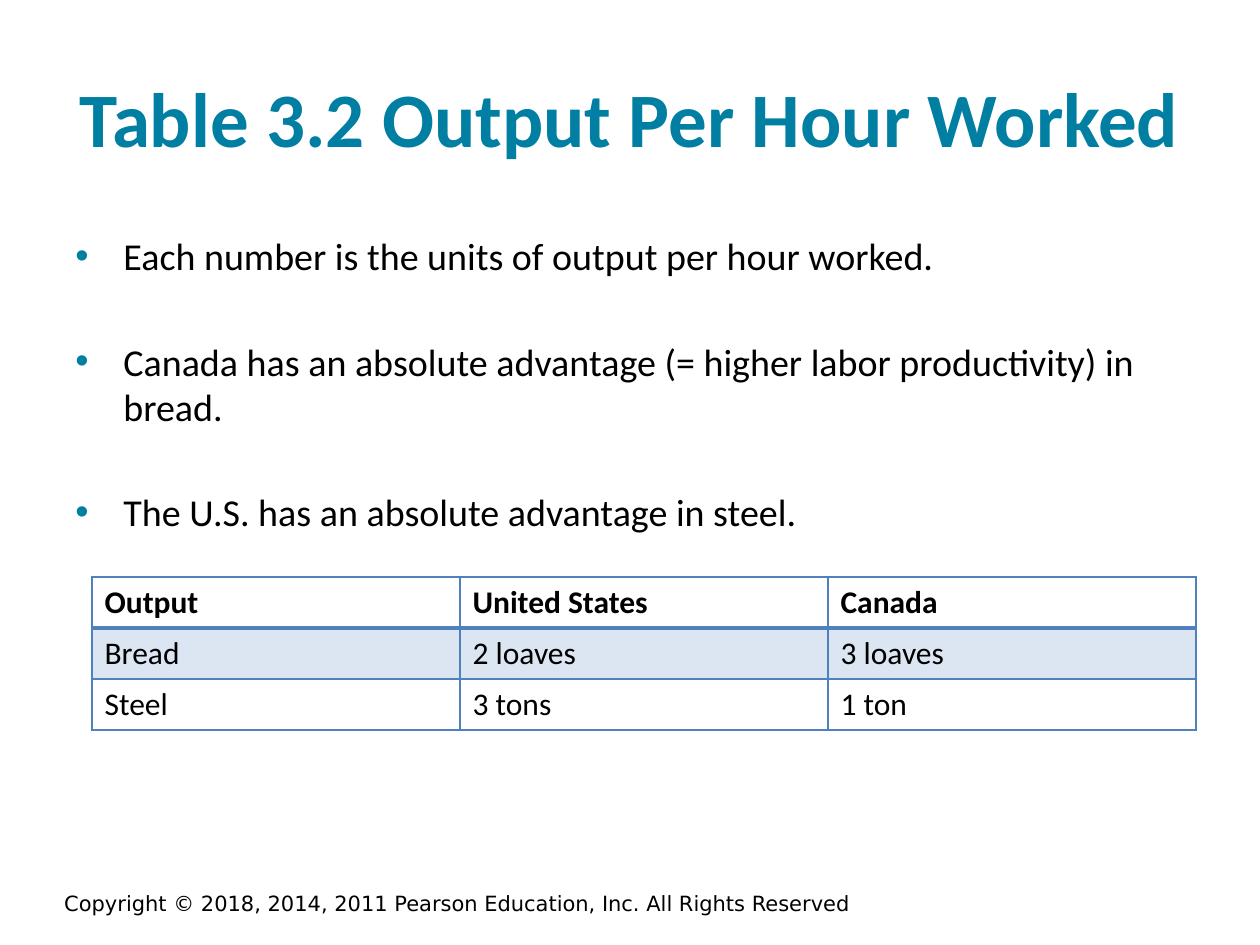
"""Build the slide on output per hour worked, with bullets and a table."""
from lxml import etree
from pptx import Presentation, util as u
from pptx.dml.color import RGBColor
from pptx.enum import text
from pptx.oxml import ns

TEAL = RGBColor(0x00, 0x7F, 0xA3)
BLACK = RGBColor(0, 0, 0)
BLUE = RGBColor(0x4F, 0x81, 0xBD)
PALE_BLUE = RGBColor(0xDC, 0xE6, 0xF2)


def px(length):
    return u.Emu(round(length * 914400 / 126))


def write(paragraph, wording, color=BLACK, **font_format):
    paragraph.text = wording
    for name, value in font_format.items():
        setattr(paragraph.font, name, value)
    paragraph.font.color.rgb = color


prs = Presentation()
prs.slide_width, prs.slide_height = px(1260), px(945)
slide = prs.slides.add_slide(prs.slide_layouts[6])

notice, title, points = [
    slide.shapes.add_textbox(*map(px, box)).text_frame
    for box in ((-20, 881, 955, 45), (63, 38, 1134, 158), (63, 224, 1134, 282))
]
for frame in (notice, title, points):
    frame.word_wrap = True
for frame in (notice, title):
    frame.vertical_anchor = text.MSO_ANCHOR.MIDDLE
    frame.paragraphs[0].alignment = text.PP_ALIGN.CENTER

write(notice.paragraphs[0],
      "Copyright © 2018, 2014, 2011 Pearson Education, Inc. All Rights Reserved",
      name="DejaVu Sans", size=u.Pt(12))
write(title.paragraphs[0], "Table 3.2 Output Per Hour Worked", TEAL,
      name="Calibri", size=u.Pt(44), bold=True)

points.margin_top = px(9)
statements = (
    "Each number is the units of output per hour worked.",
    "Canada has an absolute advantage (= higher labor productivity) in bread.",
    "The U.S. has an absolute advantage in steel.",
)
for index, statement in enumerate(statements):
    point = points.add_paragraph() if index else points.paragraphs[0]
    properties = point._p.get_or_add_pPr()
    properties.set("marL", str(px(48)))
    properties.set("indent", str(px(-48)))
    if index:
        point.space_before = u.Pt(34)
    bullet_color = etree.SubElement(properties, ns.qn("a:buClr"))
    etree.SubElement(bullet_color, ns.qn("a:srgbClr"), val=str(TEAL))
    etree.SubElement(properties, ns.qn("a:buFont"), typeface="Arial")
    etree.SubElement(properties, ns.qn("a:buChar"), char="•")
    write(point, statement, name="Calibri", size=u.Pt(21.7))

outputs = (
    ("Output", "United States", "Canada"),
    ("Bread", "2 loaves", "3 loaves"),
    ("Steel", "3 tons", "1 ton"),
)
table = slide.shapes.add_table(3, 3, *map(px, (92, 577, 1104, 153))).table
table.first_row = table.horz_banding = False
for row, entries in enumerate(outputs):
    for column, entry in enumerate(entries):
        cell = table.cell(row, column)
        write(cell.text_frame.paragraphs[0], entry,
              name="Calibri", size=u.Pt(18), bold=row == 0)
        heavy_side = {0: "B", 1: "T"}.get(row)
        for side in "LRTB":
            width = u.Pt(2 if side == heavy_side else 1)
            border = etree.SubElement(cell._tc.get_or_add_tcPr(),
                                      ns.qn(f"a:ln{side}"), w=str(width))
            border_fill = etree.SubElement(border, ns.qn("a:solidFill"))
            etree.SubElement(border_fill, ns.qn("a:srgbClr"), val=str(BLUE))
        if row == 1:
            cell.fill.solid()
            cell.fill.fore_color.rgb = PALE_BLUE
        else:
            cell.fill.background()

prs.save("out.pptx")
